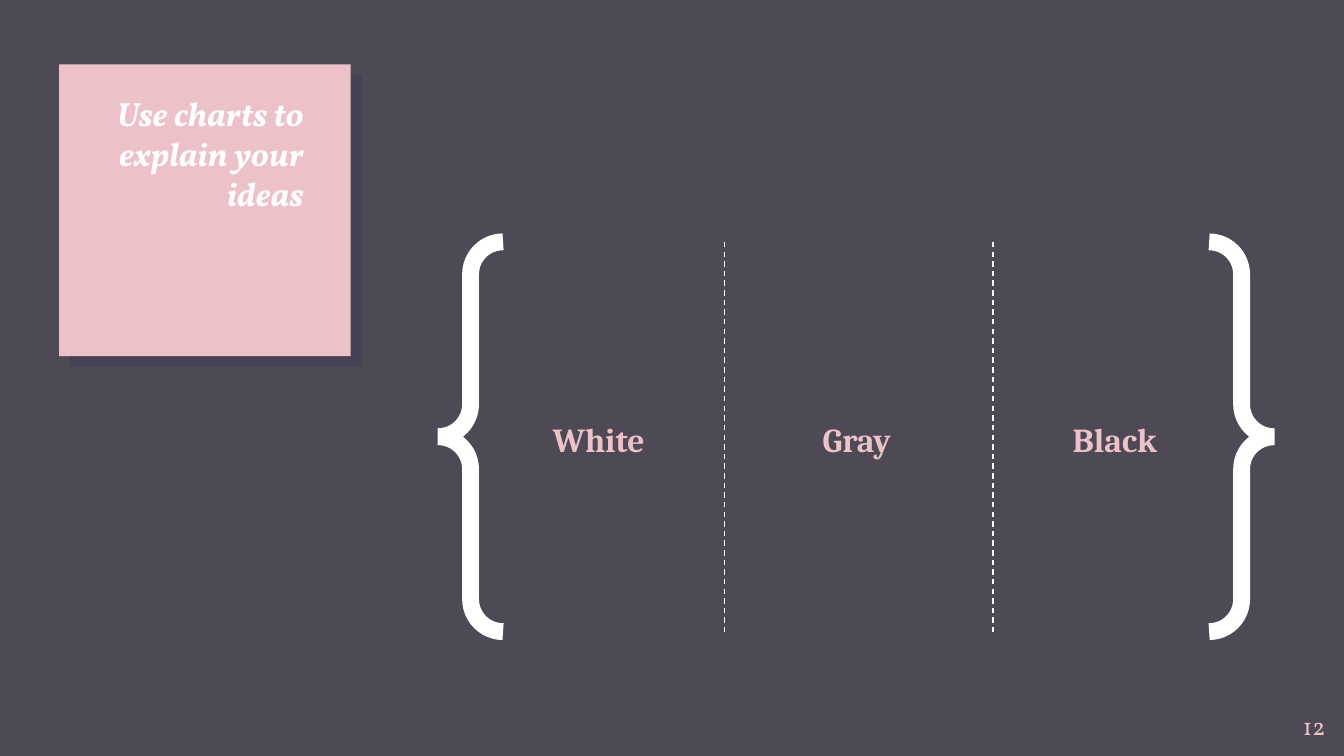
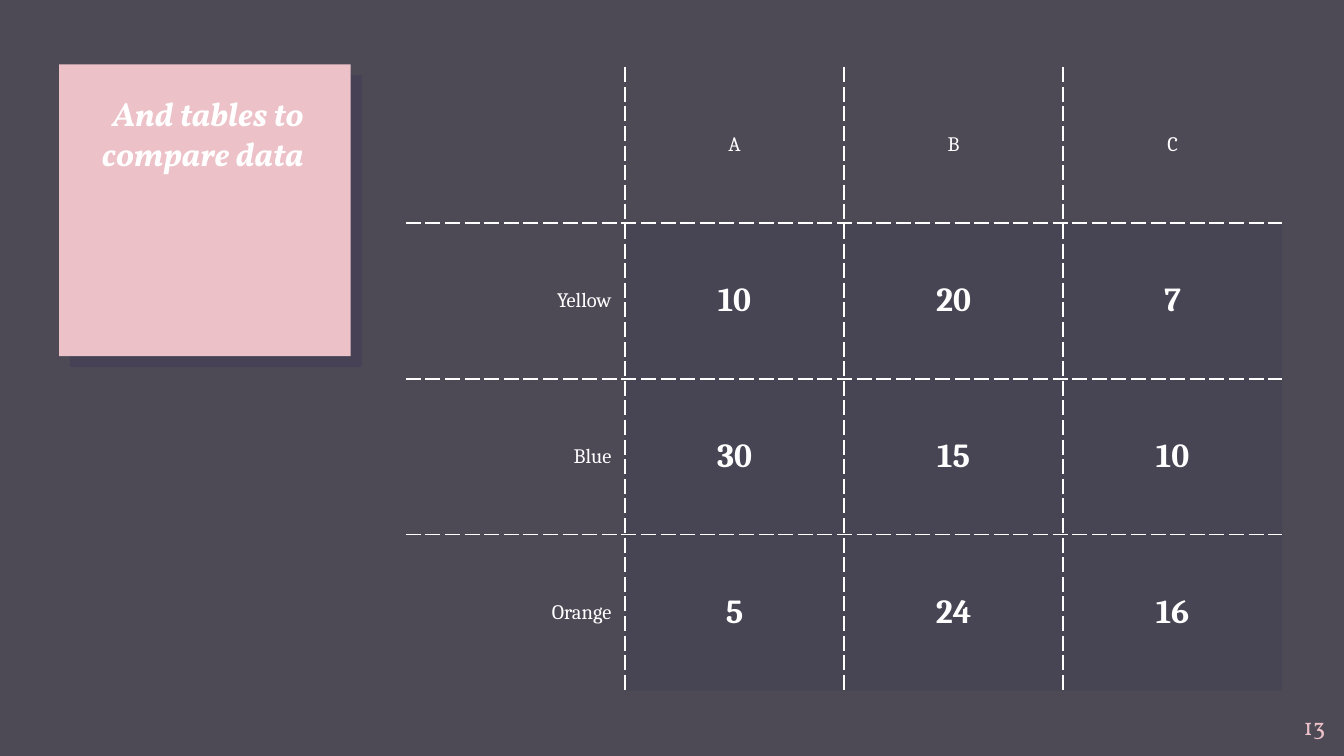
from lxml.etree import SubElement
from pptx import Presentation
from pptx.dml.color import RGBColor
from pptx.enum.dml import MSO_LINE
from pptx.enum.shapes import MSO_CONNECTOR, MSO_SHAPE
from pptx.enum.text import MSO_ANCHOR as Anchor, MSO_AUTO_SIZE, PP_ALIGN as Align
from pptx.oxml import parse_xml
from pptx.oxml.ns import nsdecls, qn
from pptx.util import Inches, Pt

SLATE = RGBColor(0x4D, 0x4A, 0x56)
PINK = RGBColor(0xEC, 0xC1, 0xC8)
WHITE = RGBColor(0xFF, 0xFF, 0xFF)
NAVY = RGBColor(0x1B, 0x1B, 0x46)
PURPLE = RGBColor(0x20, 0x12, 0x4D)
TITLE_FONT, BODY_FONT = "Vollkorn", "Cambria"
NO_GRID_STYLE = "{2D5ABB26-0587-4C30-8999-92F81FD0307C}"

CHART_TITLE, CHART_PAGE = "Use charts to explain your ideas", "12"
SHADES = ["White", "Gray", "Black"]
DIVIDERS = [5.39, 7.39]
BRACE_LEFT, BRACE_TOP, BRACE_WIDTH, BRACE_HEIGHT = 3.26, 1.8, 6.22, 2.9
LABEL_LEFT, LABEL_STEP = 3.53, 1.92

TABLE_TITLE, TABLE_PAGE = "And tables to compare data", "13"
TABLE_ROWS = [
    ["", "A", "B", "C"],
    ["Yellow", "10", "20", "7"],
    ["Blue", "30", "15", "10"],
    ["Orange", "5", "24", "16"],
]
COLUMN_WIDTH, ROW_HEIGHT = 1.63, 1.16


def write_text(frame, text, size=18, font=BODY_FONT, color=WHITE,
               bold=False, italic=False, align=Align.CENTER):
    para = frame.paragraphs[0]
    para.alignment = align
    span = para.add_run()
    span.text = text
    span.font.name, span.font.size = font, Pt(size)
    span.font.bold, span.font.italic = bold, italic
    span.font.color.rgb = color


def format_frame(frame, anchor=Anchor.TOP):
    frame.word_wrap = True
    frame.auto_size = MSO_AUTO_SIZE.NONE
    frame.vertical_anchor = anchor
    frame.margin_left = frame.margin_right = Inches(0.1)
    frame.margin_top = frame.margin_bottom = Inches(0.1)


def add_text(page, text, left, top, width, height, anchor=Anchor.TOP, **style):
    box = page.shapes.add_textbox(*map(Inches, (left, top, width, height)))
    format_frame(box.text_frame, anchor)
    write_text(box.text_frame, text, **style)


def add_card_to_layout(page):
    """Build the title card and move it to the layout that all pages share."""
    card = page.shapes.add_shape(
        MSO_SHAPE.RECTANGLE, *map(Inches, (0.44, 0.48, 2.17, 2.17)))
    card.fill.solid()
    card.fill.fore_color.rgb = PINK
    card.line.fill.background()
    card._element.spPr.append(parse_xml(
        f'<a:effectLst {nsdecls("a")}>'
        f'<a:outerShdw blurRad="0" dist="{Pt(8.2)}" dir="2700000" algn="tl" rotWithShape="0">'
        f'<a:srgbClr val="{PURPLE}"><a:alpha val="15000"/></a:srgbClr>'
        '</a:outerShdw></a:effectLst>'))
    page.slide_layout.shapes._spTree.append(card._element)


def add_page(deck, title_text, number):
    page = deck.slides.add_slide(deck.slide_layouts[5])
    title = page.shapes.title
    title.left, title.top = Inches(0.47), Inches(0.59)
    title.width, title.height = Inches(1.89), Inches(1.77)
    format_frame(title.text_frame)
    write_text(title.text_frame, title_text, font=TITLE_FONT,
               bold=True, italic=True, align=Align.RIGHT)
    add_text(page, number, 9.36, 5.19, 0.6, 0.43, size=13,
             font=TITLE_FONT, color=PINK, align=Align.RIGHT)
    return page


def add_divider(page, x):
    divider = page.shapes.add_connector(
        MSO_CONNECTOR.STRAIGHT,
        *map(Inches, (x, BRACE_TOP, x, BRACE_TOP + BRACE_HEIGHT)))
    divider.line.color.rgb = WHITE
    divider.line.width = Pt(0.75)
    divider.line.dash_style = MSO_LINE.DASH
    SubElement(divider._element.spPr, qn("a:effectLst"))


def fill_chart_page(page):
    braces = page.shapes.add_shape(
        MSO_SHAPE.DOUBLE_BRACE,
        *map(Inches, (BRACE_LEFT, BRACE_TOP, BRACE_WIDTH, BRACE_HEIGHT)))
    braces.shadow.inherit = False
    braces.fill.background()
    braces.line.color.rgb = WHITE
    braces.line.width = Pt(9)
    SubElement(braces.line._get_or_add_ln(), qn("a:miter"), lim="800000")
    for x in DIVIDERS:
        add_divider(page, x)
    for index, shade in enumerate(SHADES):
        add_text(page, shade, LABEL_LEFT + index * LABEL_STEP, 2.78, 1.85, 0.98,
                 anchor=Anchor.MIDDLE, color=PINK, bold=True)


def set_borders(cell, sides):
    """Draw dashed lines on the sides marked true, and none on the rest."""
    properties = cell._tc.get_or_add_tcPr()
    for side, visible in sides.items():
        paint = (f'<a:solidFill><a:srgbClr val="{WHITE}"/></a:solidFill>'
                 '<a:prstDash val="dash"/>' if visible else '<a:noFill/>')
        properties.append(parse_xml(
            f'<a:ln{side} {nsdecls("a")} w="{Pt(0.75)}">{paint}</a:ln{side}>'))


def format_cell(cell, text, row, column):
    last_row, last_column = len(TABLE_ROWS) - 1, len(TABLE_ROWS[0]) - 1
    is_value = row > 0 and column > 0
    cell.vertical_anchor = Anchor.MIDDLE
    cell.margin_left = cell.margin_right = Inches(0.1)
    cell.margin_top = cell.margin_bottom = Inches(0.07)
    set_borders(cell, {"L": column > 0, "R": column < last_column,
                       "T": row > 0, "B": row < last_row})
    if is_value:
        cell.fill.solid()
        cell.fill.fore_color.rgb = NAVY
        tint = cell._tc.tcPr.find(qn("a:solidFill"))[0]
        SubElement(tint, qn("a:alpha"), val="10000")
    else:
        cell.fill.background()
    if text:
        write_text(cell.text_frame, text, size=18 if is_value else 11, bold=is_value,
                   align=Align.CENTER if column else Align.RIGHT)


def fill_table_page(page):
    rows, columns = len(TABLE_ROWS), len(TABLE_ROWS[0])
    table = page.shapes.add_table(
        rows, columns, Inches(3.02), Inches(0.5),
        Inches(columns * COLUMN_WIDTH), Inches(rows * ROW_HEIGHT)).table
    table.first_row = table.horz_banding = False
    table._tbl.tblPr.find(qn("a:tableStyleId")).text = NO_GRID_STYLE
    for column in table.columns:
        column.width = Inches(COLUMN_WIDTH)
    for row, values in enumerate(TABLE_ROWS):
        table.rows[row].height = Inches(ROW_HEIGHT)
        for column, text in enumerate(values):
            format_cell(table.cell(row, column), text, row, column)


def main():
    deck = Presentation()
    deck.slide_width = Inches(10)
    deck.slide_height = deck.slide_width * 9 // 16
    background = deck.slide_master.background.fill
    background.solid()
    background.fore_color.rgb = SLATE
    chart_page = add_page(deck, CHART_TITLE, CHART_PAGE)
    add_card_to_layout(chart_page)
    fill_chart_page(chart_page)
    fill_table_page(add_page(deck, TABLE_TITLE, TABLE_PAGE))
    deck.save("out.pptx")


if __name__ == "__main__":
    main()
